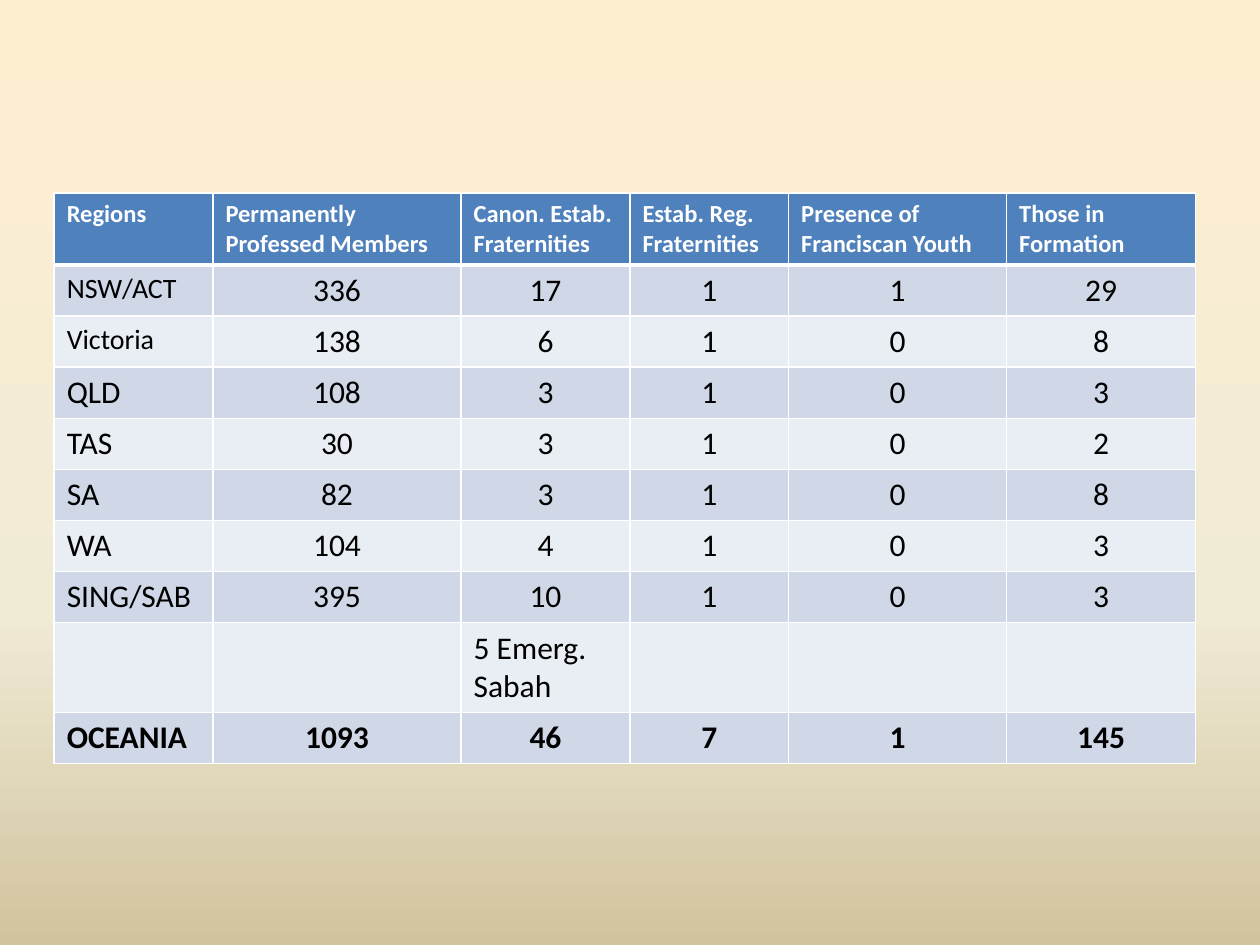
from copy import deepcopy
from dataclasses import dataclass

from lxml import etree
from pptx import Presentation
from pptx import util as u
from pptx.dml.color import RGBColor
from pptx.enum import text
from pptx.oxml.ns import qn


@dataclass(frozen=True)
class Theme:
    font: str = "Calibri"
    head_size: int = 14
    label_size: int = 16
    body_size: int = 18
    head_fill: str = "4F81BD"
    bands: tuple = ("D0D8E8", "E9EDF4")
    white: str = "FFFFFF"
    black: str = "000000"
    backdrop: tuple = ((0, "FFEFD1"), (0.65, "F0EBD5"), (1, "D1C39F"))
    thin: int = 1
    thick: int = 3


T = Theme()
WIDTH, HEIGHT = u.Inches(10), u.Inches(7.5)
LEFT, TOP = 0.043, 0.204
COLS = (0.126, 0.197, 0.134, 0.126, 0.173, 0.15)
ROW = 0.054

HEADER = ("Regions", "Permanently Professed Members", "Canon. Estab. Fraternities",
          "Estab. Reg. Fraternities", "Presence of Franciscan Youth", "Those in Formation")
REGIONS = (
    ("NSW/ACT", 336, 17, 1, 1, 29),
    ("Victoria", 138, 6, 1, 0, 8),
    ("QLD", 108, 3, 1, 0, 3),
    ("TAS", 30, 3, 1, 0, 2),
    ("SA", 82, 3, 1, 0, 8),
    ("WA", 104, 4, 1, 0, 3),
    ("SING/SAB", 395, 10, 1, 0, 3),
)
EMERGING = ("", "", "5 Emerg. Sabah", "", "", "")
TOTAL = ("OCEANIA", 1093, 46, 7, 1, 145)


def set_backdrop(s):
    fill = s.background.fill
    fill.gradient()
    fill.gradient_angle = 270
    stops = s.element.find(".//" + qn("a:gsLst"))
    stops.append(deepcopy(stops[0]))
    for stop, (position, color) in zip(fill.gradient_stops, T.backdrop):
        stop.position = position
        stop.color.rgb = RGBColor.from_string(color)


def set_borders(cell, top, bottom):
    tcPr = cell._tc.get_or_add_tcPr()
    for side, width in (("L", T.thin), ("R", T.thin), ("T", top), ("B", bottom)):
        ln = etree.SubElement(tcPr, qn(f"a:ln{side}"), w=str(u.Pt(width)))
        solid = etree.SubElement(ln, qn("a:solidFill"))
        etree.SubElement(solid, qn("a:srgbClr"), val=T.white)


def set_cell(cell, value, fill, size, color, bold):
    cell.fill.solid()
    cell.fill.fore_color.rgb = RGBColor.from_string(fill)
    p = cell.text_frame.paragraphs[0]
    p.text = str(value)
    if isinstance(value, int):
        p.alignment = text.PP_ALIGN.CENTER
    p.font.size = u.Pt(size)
    for r in p.runs:
        r.font.name = T.font
        r.font.size = u.Pt(size)
        r.font.bold = bold
        r.font.color.rgb = RGBColor.from_string(color)


def add_regions_table(s):
    rows = (HEADER, *REGIONS, EMERGING, TOTAL)
    table = s.shapes.add_table(
        len(rows), len(COLS), int(WIDTH * LEFT), int(HEIGHT * TOP),
        int(WIDTH * sum(COLS)), int(HEIGHT * ROW * len(rows))).table
    for column, share in zip(table.columns, COLS):
        column.width = int(WIDTH * share)
    for i, values in enumerate(rows):
        table.rows[i].height = int(HEIGHT * ROW)
        head = i == 0
        for j, value in enumerate(values):
            cell = table.cell(i, j)
            set_borders(cell, T.thick if i == 1 else T.thin, T.thick if head else T.thin)
            if head:
                set_cell(cell, value, T.head_fill, T.head_size, T.white, True)
            else:
                size = T.label_size if j == 0 and i <= 2 else T.body_size
                set_cell(cell, value, T.bands[(i - 1) % 2], size, T.black, values is TOTAL)


def main():
    prs = Presentation()
    prs.slide_width, prs.slide_height = WIDTH, HEIGHT
    s = prs.slides.add_slide(prs.slide_layouts[6])
    set_backdrop(s)
    add_regions_table(s)
    prs.save("out.pptx")


if __name__ == "__main__":
    main()
